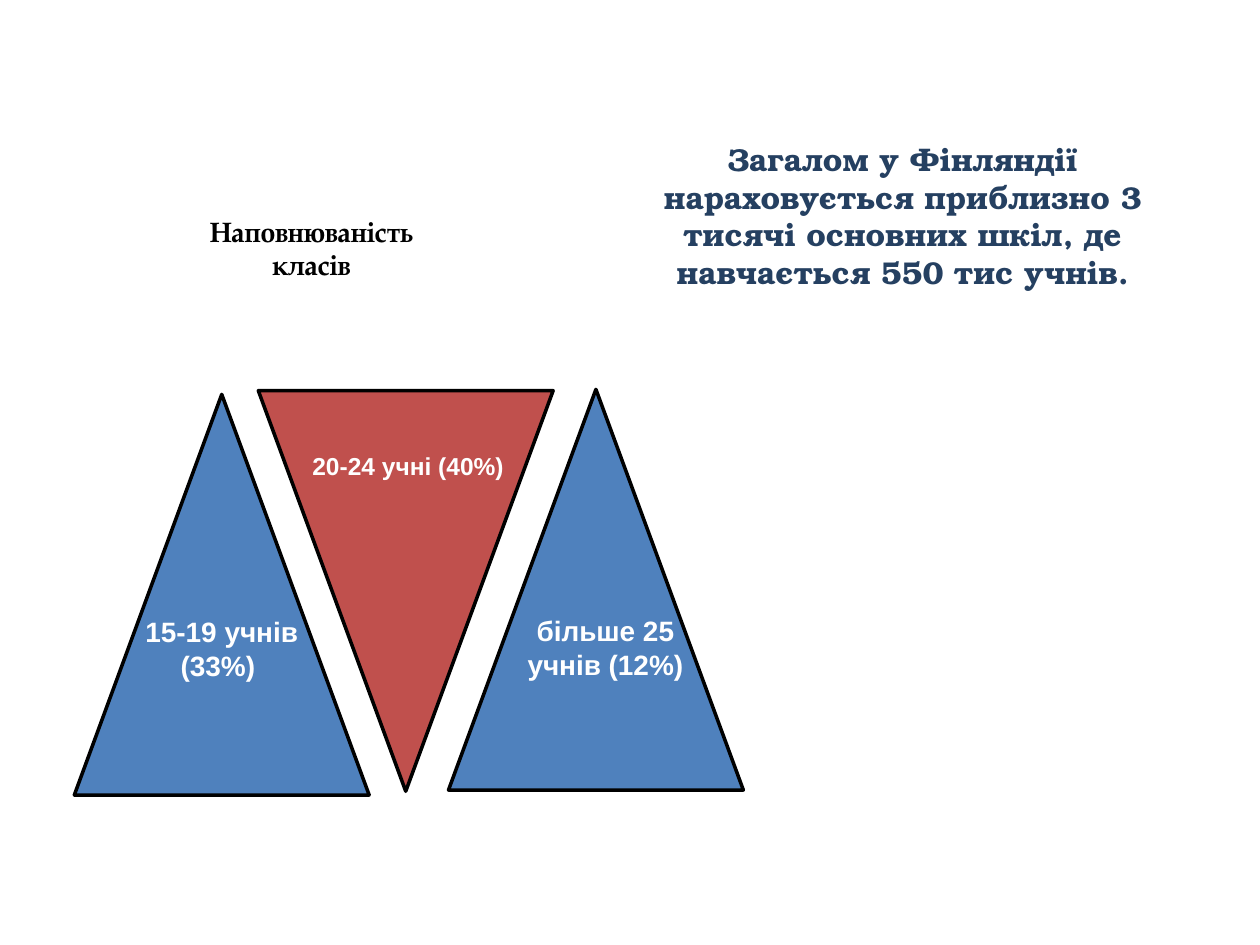
from dataclasses import dataclass

from pptx import Presentation
from pptx.dml.color import RGBColor
from pptx.enum.shapes import MSO_SHAPE
from pptx.enum.text import MSO_ANCHOR, MSO_AUTO_SIZE, PP_ALIGN
from pptx.slide import Slide
from pptx.text.text import TextFrame
from pptx.util import Inches, Pt

# Grid of 100 columns by 75 rows over the slide
CELL = Inches(0.1)
COLUMNS, ROWS = 100, 75


@dataclass(frozen=True)
class Style:
    font: str
    size: int
    color: str


@dataclass(frozen=True)
class Theme:
    blue: str = "4F81BD"
    red: str = "C0504D"
    outline: str = "000000"
    outline_width: int = 2
    title: Style = Style("TeX Gyre Bonum", 18, "254061")
    heading: Style = Style("TeX Gyre Pagella", 16, "000000")
    label: Style = Style("Arial", 16, "FFFFFF")
    small_label: Style = Style("Arial", 14, "FFFFFF")


THEME = Theme()


@dataclass(frozen=True)
class Area:
    column: float
    row: float
    width: float
    height: float

    def emu(self) -> list[int]:
        return [round(cells * CELL) for cells in
                (self.column, self.row, self.width, self.height)]


@dataclass(frozen=True)
class Triangle:
    column: float
    row: float
    color: str
    rotation: int = 0


@dataclass(frozen=True)
class Label:
    text: str
    area: Area
    style: Style


TITLE = Label("Загалом у Фінляндії нараховується приблизно 3 тисячі основних шкіл, "
              "де навчається 550 тис учнів.", Area(47.3, 10.3, 48.7, 13.6), THEME.title)

TRIANGLE_WIDTH, TRIANGLE_HEIGHT = 23.4, 31.8
TRIANGLES = [
    Triangle(5.9, 31.3, THEME.blue),
    Triangle(20.5, 31, THEME.red, 180),
    Triangle(35.6, 30.9, THEME.blue),
]

LABELS = [
    Label("більше 25 учнів (12%)", Area(39.3, 48.2, 17.5, 6.4), THEME.label),
    Label("15-19 учнів (33%) ", Area(8.2, 48.3, 18.8, 6.4), THEME.label),
    Label("20-24 учні (40%)", Area(22.6, 35.3, 19.6, 3.4), THEME.small_label),
    Label("Наповнюваність класів", Area(13.4, 16.5, 22.6, 6.4), THEME.heading),
]


def write(frame: TextFrame, label: Label) -> None:
    frame.word_wrap = True
    para = frame.paragraphs[0]
    para.text = label.text
    para.alignment = PP_ALIGN.CENTER
    font = para.font
    font.name, font.size, font.bold = label.style.font, Pt(label.style.size), True
    font.color.rgb = RGBColor.from_string(label.style.color)


def add_title(page: Slide, label: Label) -> None:
    title = page.shapes.title
    title.left, title.top, title.width, title.height = label.area.emu()
    write(title.text_frame, label)
    title.text_frame.auto_size = MSO_AUTO_SIZE.NONE
    title.text_frame.vertical_anchor = MSO_ANCHOR.MIDDLE


def add_triangle(page: Slide, triangle: Triangle) -> None:
    area = Area(triangle.column, triangle.row, TRIANGLE_WIDTH, TRIANGLE_HEIGHT)
    shape = page.shapes.add_shape(MSO_SHAPE.ISOSCELES_TRIANGLE, *area.emu())
    shape.rotation = triangle.rotation
    shape.shadow.inherit = False
    shape.fill.solid()
    shape.fill.fore_color.rgb = RGBColor.from_string(triangle.color)
    shape.line.color.rgb = RGBColor.from_string(THEME.outline)
    shape.line.width = Pt(THEME.outline_width)


def add_label(page: Slide, label: Label) -> None:
    box = page.shapes.add_textbox(*label.area.emu())
    write(box.text_frame, label)
    box.text_frame.auto_size = MSO_AUTO_SIZE.SHAPE_TO_FIT_TEXT


def main() -> None:
    deck = Presentation()
    deck.slide_width, deck.slide_height = COLUMNS * CELL, ROWS * CELL
    page = deck.slides.add_slide(deck.slide_layouts.get_by_name("Title Only"))

    # Statement at the top right
    add_title(page, TITLE)

    # Class size triangles, then their captions and heading
    for triangle in TRIANGLES:
        add_triangle(page, triangle)
    for label in LABELS:
        add_label(page, label)

    deck.save("out.pptx")


if __name__ == "__main__":
    main()
